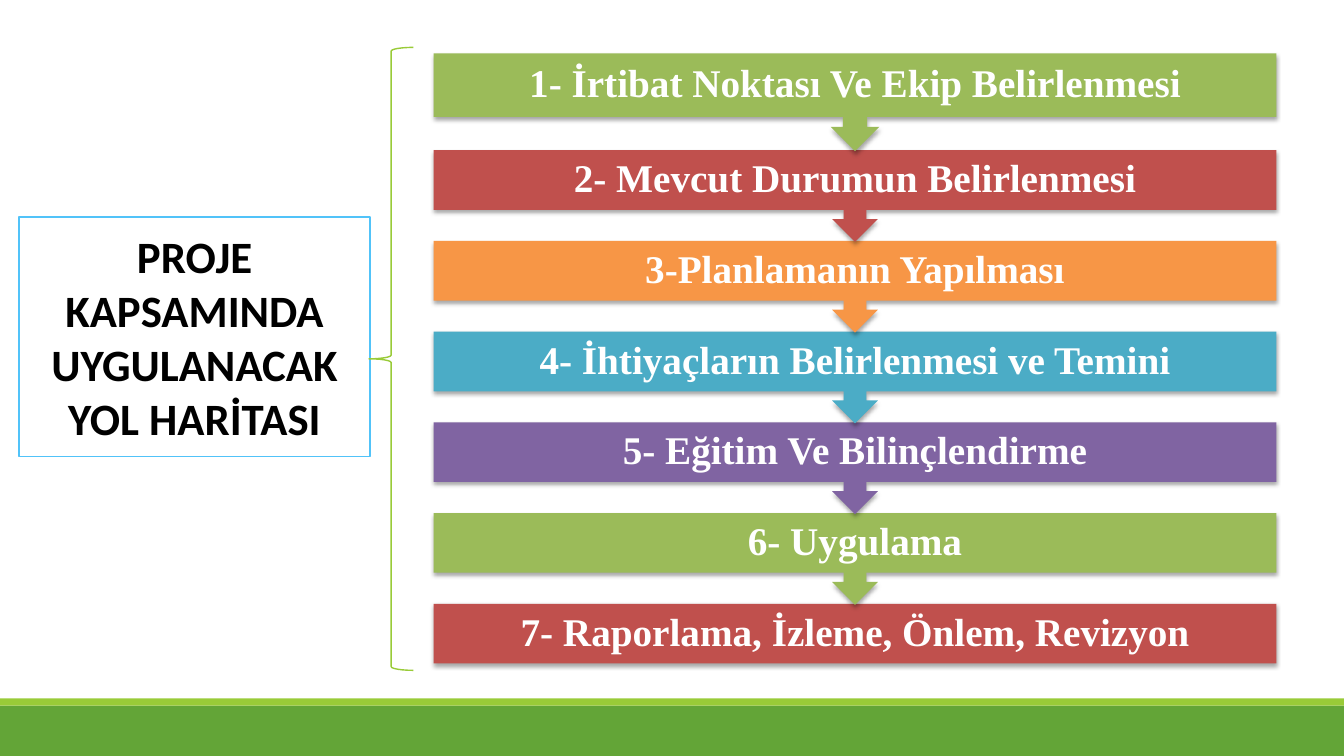
from dataclasses import dataclass

from lxml import etree
from pptx import Presentation
from pptx import util as u
from pptx.dml.color import RGBColor
from pptx.enum import shapes, text
from pptx.oxml import ns


@dataclass(frozen=True)
class Theme:
    green: str = "63A537"
    lime: str = "99CB38"
    sky: str = "51C3F9"
    white: str = "FFFFFF"
    black: str = "000000"
    steps: tuple = ("9BBB59", "C0504D", "F79646", "4BACC6", "8064A2")
    title_font: str = "Calibri"
    step_font: str = "Times New Roman"
    title_size: int = 32
    step_size: int = 28


THEME = Theme()
SHAPE = shapes.MSO_SHAPE
SLIDE_W, SLIDE_H = 13.33, 7.5
BAR_RATIO = 0.65  # share of a callout's height taken by its bar
STEPS = [
    "1- İrtibat Noktası Ve Ekip Belirlenmesi",
    "2- Mevcut Durumun Belirlenmesi",
    "3-Planlamanın Yapılması",
    "4- İhtiyaçların Belirlenmesi ve Temini",
    "5- Eğitim Ve Bilinçlendirme",
    "6- Uygulama",
    "7- Raporlama, İzleme, Önlem, Revizyon",
]


def rgb(color):
    return RGBColor.from_string(color)


def inches(*box):
    return [u.Inches(v) for v in box]


def add_shape(s, kind, box, fill=None, line=None, width=1):
    sp = s.shapes.add_shape(kind, *inches(*box))
    sp.shadow.inherit = False
    paint(sp, fill, line, width)
    return sp


def paint(sp, fill, line, width):
    if fill:
        sp.fill.solid()
        sp.fill.fore_color.rgb = rgb(fill)
    else:
        sp.fill.background()
    if line:
        sp.line.color.rgb = rgb(line)
        sp.line.width = u.Pt(width)
    else:
        sp.line.fill.background()


def add_shadow(sp):
    effects = sp._element.spPr.find(ns.qn("a:effectLst"))
    shadow = etree.SubElement(effects, ns.qn("a:outerShdw"), blurRad=str(u.Pt(3.1)),
                              dist=str(u.Pt(1.8)), dir="5400000", rotWithShape="0")
    color = etree.SubElement(shadow, ns.qn("a:srgbClr"), val=THEME.black)
    etree.SubElement(color, ns.qn("a:alpha"), val="35000")


def set_text(sp, words, font, size, color, inset_x, inset_y):
    tf = sp.text_frame
    tf.text = words
    tf.word_wrap = True
    tf.auto_size = text.MSO_AUTO_SIZE.NONE
    tf.vertical_anchor = text.MSO_ANCHOR.MIDDLE
    tf.margin_left = tf.margin_right = u.Inches(inset_x)
    tf.margin_top = tf.margin_bottom = u.Inches(inset_y)
    p = tf.paragraphs[0]
    p.alignment = text.PP_ALIGN.CENTER
    f = p.runs[0].font
    f.name, f.size, f.bold = font, u.Pt(size), True
    f.color.rgb = rgb(color)
    return p


def draw_footer(s, left, top, width, height):
    stripe = 0.07
    add_shape(s, SHAPE.RECTANGLE, (left, top + stripe, width, height - stripe), THEME.green)
    add_shape(s, SHAPE.RECTANGLE, (left, top, width, stripe), THEME.lime)


def draw_title(s, left, top, width, height):
    sp = s.shapes.title
    sp.left, sp.top, sp.width, sp.height = inches(left, top, width, height)
    geometry = etree.SubElement(sp._element.spPr, ns.qn("a:prstGeom"), prst="roundRect")
    etree.SubElement(geometry, ns.qn("a:avLst"))
    paint(sp, THEME.white, THEME.sky, 1.25)
    set_text(sp, "PROJE KAPSAMINDA UYGULANACAK YOL HARİTASI",
             THEME.title_font, THEME.title_size, THEME.black, 0.1, 0.05)


def draw_step(s, index, left, top, width, height):
    """One bar, with an arrow down to the next bar unless it is the last."""
    bar = (left, top, width, height * BAR_RATIO)
    fill = THEME.steps[index % len(THEME.steps)]
    if index == len(STEPS) - 1:
        sp = add_shape(s, SHAPE.RECTANGLE, bar, fill)
    else:
        sp = add_shape(s, SHAPE.UP_ARROW_CALLOUT, (left, top, width, height), fill)
        sp.rotation = 180
    add_shadow(sp)
    label = s.shapes.add_textbox(*inches(*bar))
    p = set_text(label, STEPS[index], THEME.step_font, THEME.step_size,
                 THEME.white, 0.22, 0.22)
    p.line_spacing = 0.9


def draw_steps(s, left, top, width, first_height=0.97, height=0.91):
    # Later steps lie behind, so each arrow tip overlaps the next bar
    second_top, pitch = top + 0.96, 0.9
    for i in reversed(range(1, len(STEPS))):
        draw_step(s, i, left, second_top + (i - 1) * pitch, width, height)
    draw_step(s, 0, left, top, width, first_height)


def draw_roadmap(prs):
    s = prs.slides.add_slide(prs.slide_layouts[5])
    # Footer bands
    draw_footer(s, 0, 6.93, SLIDE_W, SLIDE_H - 6.93)
    # Title and brace
    add_shape(s, SHAPE.LEFT_BRACE, (3.66, 0.47, 0.44, 6.18), line=THEME.lime)
    draw_title(s, 0.19, 2.15, 3.48, 2.38)
    # Steps
    draw_steps(s, 4.3, 0.53, 8.36)


def main():
    prs = Presentation()
    prs.slide_width, prs.slide_height = inches(SLIDE_W, SLIDE_H)
    draw_roadmap(prs)
    prs.save("out.pptx")


if __name__ == "__main__":
    main()
